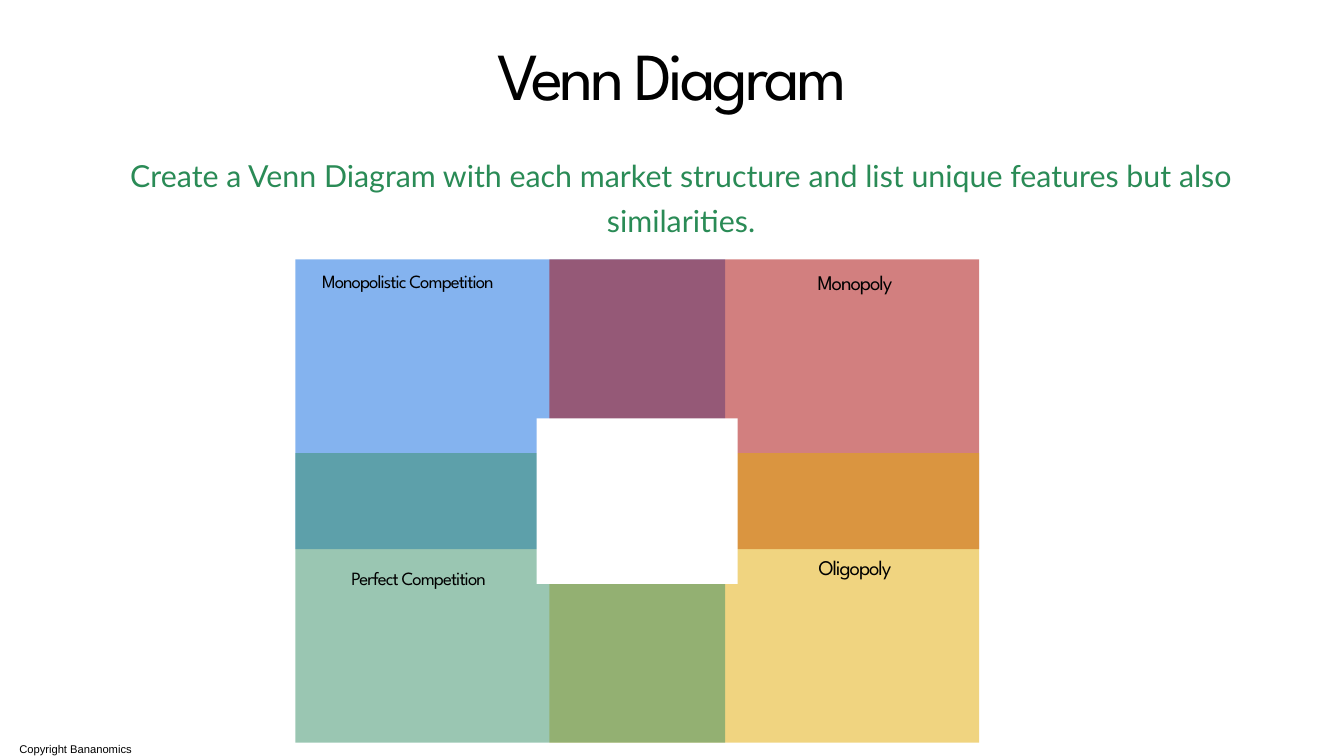
import pptx
import pptx.dml.color
import pptx.enum.shapes
import pptx.enum.text
import pptx.oxml.ns
import pptx.util
from lxml import etree

Pt = pptx.util.Pt

COLORS = {
    "white": "FFFFFF",
    "black": "000000",
    "prompt": "2A8B56",
    "blue": "0A69E1",
    "red": "A70000",
    "yellow": "E2AB02",
    "green": "378E66",
}
HEADING_FONT = "League Spartan"


def rgb(color):
    return pptx.dml.color.RGBColor.from_string(COLORS[color])


class VennSlide:
    def __init__(self, presentation):
        self.slide = presentation.slides.add_slide(presentation.slide_layouts[5])
        self.slide.background.fill.solid()
        self.slide.background.fill.fore_color.rgb = rgb("white")

    def fill_text(self, shape, text, size, line_spacing, font, color, tracking):
        """Write one centred line; tracking is the letter spacing in points."""
        frame = shape.text_frame
        frame.word_wrap = True
        frame.auto_size = pptx.enum.text.MSO_AUTO_SIZE.NONE
        frame.vertical_anchor = pptx.enum.text.MSO_ANCHOR.TOP
        frame.margin_left = frame.margin_right = 0
        frame.margin_top = frame.margin_bottom = 0
        paragraph = frame.paragraphs[0]
        paragraph.alignment = pptx.enum.text.PP_ALIGN.CENTER
        paragraph.line_spacing = Pt(line_spacing)
        run = paragraph.add_run()
        run.text = text
        run.font.size = Pt(size)
        run.font.name = font
        run.font.color.rgb = rgb(color)
        if tracking:
            run._r.get_or_add_rPr().set("spc", str(round(tracking * 100)))

    def title(self, text, left, top, width, height):
        shape = self.slide.shapes.title
        shape.left, shape.top = Pt(left), Pt(top)
        shape.width, shape.height = Pt(width), Pt(height)
        self.fill_text(shape, text, 72, 68.4, HEADING_FONT, "black", -3.6)

    def text(self, text, left, top, width, height, size, line_spacing,
             font=HEADING_FONT, color="black", tracking=0):
        shape = self.slide.shapes.add_textbox(Pt(left), Pt(top), Pt(width), Pt(height))
        self.fill_text(shape, text, size, line_spacing, font, color, tracking)

    def rectangle(self, left, top, width, height, color, opacity=100):
        shape = self.slide.shapes.add_shape(
            pptx.enum.shapes.MSO_SHAPE.RECTANGLE,
            Pt(left), Pt(top), Pt(width), Pt(height))
        shape.shadow.inherit = False
        shape.line.fill.background()
        shape.fill.solid()
        shape.fill.fore_color.rgb = rgb(color)
        if opacity < 100:
            qn = pptx.oxml.ns.qn
            fill_color = shape._element.spPr.find(qn("a:solidFill")).find(qn("a:srgbClr"))
            etree.SubElement(fill_color, qn("a:alpha")).set("val", str(opacity * 1000))


def main():
    presentation = pptx.Presentation()
    presentation.slide_width, presentation.slide_height = Pt(1440), Pt(810)
    venn = VennSlide(presentation)

    venn.title("Venn Diagram", 76.5, 53.3, 1287, 76.5)
    venn.text("Create a Venn Diagram with each market structure and list unique "
              "features but also similarities.",
              81, 159, 1297.5, 97, 32.5, 48.4, "Lato", "prompt")
    venn.text("Copyright Bananomics", -147, 793, 456, 17, 12, 16.8, "Arial")

    # Four overlapping regions, one per market structure
    left, right, top, bottom = 316.5, 588.5, 278, 485.5
    width, height = 460.5, 310.3
    for x, y, color in ((left, top, "blue"), (right, top, "red"),
                        (right, bottom, "yellow"), (left, bottom, "green")):
        venn.rectangle(x, y, width, height, color, opacity=50)

    for name, x, y in (("Monopolistic Competition", 339, 293.8),
                       ("Perfect Competition", 350.5, 612)):
        venn.text(name, x, y, 196, 21, 20, 19, tracking=-1)
    for name, y in (("Monopoly", 294.5), ("Oligopoly", 599.8)):
        venn.text(name, 806.5, y, 219, 23, 22.3, 21.2, tracking=-1.1)

    # Centre space for features shared by all four
    centre_width, centre_height = 215.5, 177.5
    venn.rectangle((left + right + width - centre_width) / 2,
                   (top + bottom + height - centre_height) / 2,
                   centre_width, centre_height, "white")

    presentation.save("out.pptx")


if __name__ == "__main__":
    main()
